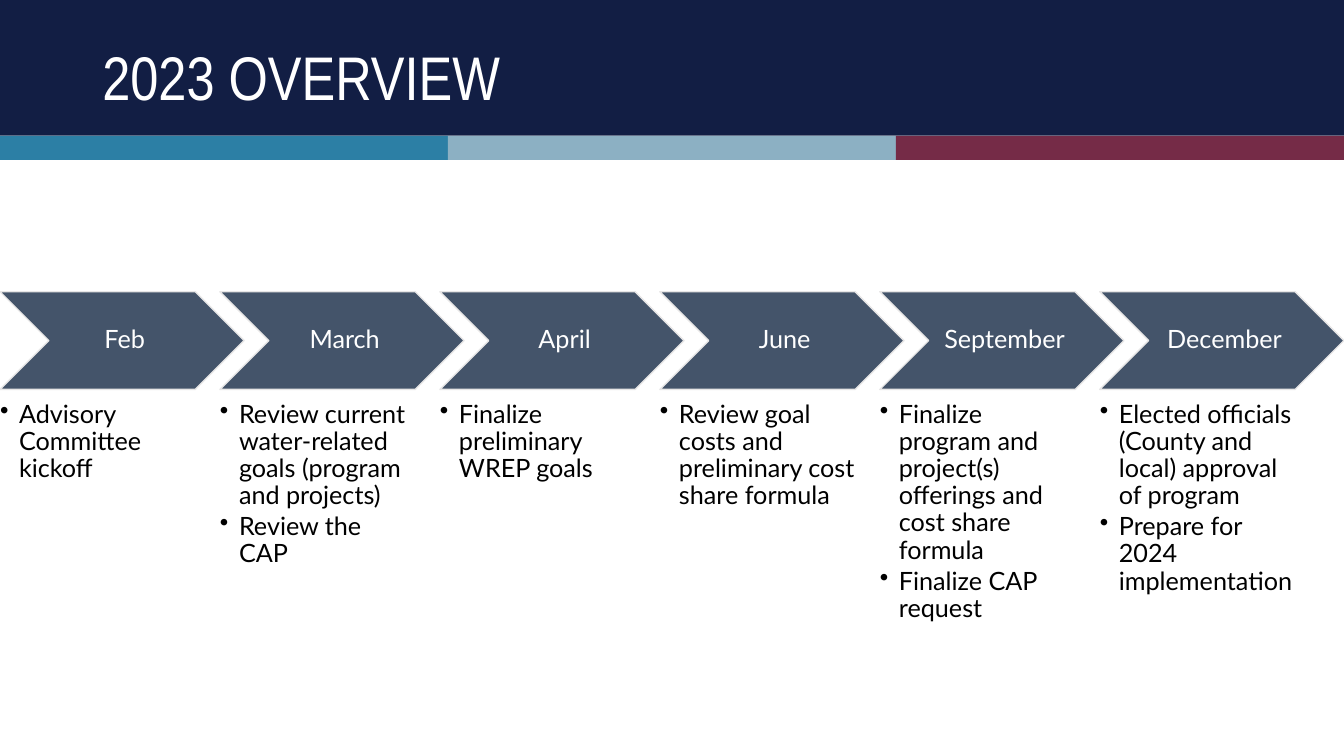
import pptx
import pptx.dml.color
import pptx.enum.shapes
import pptx.enum.text
import pptx.oxml.ns
import pptx.util
from lxml import etree

Pt = pptx.util.Pt
RGBColor = pptx.dml.color.RGBColor
MSO_SHAPE = pptx.enum.shapes.MSO_SHAPE
PP_ALIGN = pptx.enum.text.PP_ALIGN
MSO_ANCHOR = pptx.enum.text.MSO_ANCHOR

NAVY = RGBColor(0x12, 0x1E, 0x44)
TEAL = RGBColor(0x2C, 0x7F, 0xA5)
PALE_BLUE = RGBColor(0x8C, 0xB0, 0xC3)
MAROON = RGBColor(0x75, 0x2B, 0x47)
SLATE = RGBColor(0x44, 0x54, 0x6A)
LIGHT_GREY = RGBColor(0xE7, 0xE6, 0xE6)
WHITE = RGBColor(0xFF, 0xFF, 0xFF)
BLACK = RGBColor(0, 0, 0)

SLIDE_W, SLIDE_H = 960, 540
HEADER_H, STRIPE_H = 97, 17.2
CHEVRON_W, CHEVRON_H, CHEVRON_TOP = 174.4, 69.8, 208.4
TASKS_W, TASKS_H, TASKS_TOP = 139.5, 155.5, 286.6

MILESTONES = [
    ("Feb", ["Advisory Committee kickoff"]),
    ("March", ["Review current water-related goals (program and projects)",
               "Review the CAP"]),
    ("April", ["Finalize preliminary WREP goals"]),
    ("June", ["Review goal costs and preliminary cost share formula"]),
    ("September", ["Finalize program and project(s) offerings and cost share formula",
                   "Finalize CAP request"]),
    ("December", ["Elected officials (County and local) approval of program",
                  "Prepare for 2024 implementation"]),
]


class SlideBuilder:
    title_font, body_font = "Arial Narrow", "Lato"
    title_size, body_size = 44, 18
    line_spacing = 0.9
    bullet_indent = 13.6

    def __init__(self, slide):
        self.slide = slide

    def shape(self, kind, x, y, w, h, fill, line=None):
        sp = self.slide.shapes.add_shape(kind, Pt(x), Pt(y), Pt(w), Pt(h))
        sp.shadow.inherit = False
        sp.fill.solid()
        sp.fill.fore_color.rgb = fill
        if line is None:
            sp.line.fill.background()
        else:
            sp.line.color.rgb = line
            sp.line.width = Pt(1)
        return sp

    def frame(self, sp, insets, anchor):
        """Set wrapping, insets (left, top, right, bottom) and anchor."""
        tf = sp.text_frame
        tf.word_wrap = True
        tf.margin_left, tf.margin_top, tf.margin_right, tf.margin_bottom = map(Pt, insets)
        tf.vertical_anchor = anchor
        return tf

    def textbox(self, x, y, w, h, insets, anchor):
        sp = self.slide.shapes.add_textbox(Pt(x), Pt(y), Pt(w), Pt(h))
        return self.frame(sp, insets, anchor)

    def paragraph(self, p, text, font, size, color, align=PP_ALIGN.LEFT):
        p.text = text
        p.alignment = align
        p.line_spacing = self.line_spacing
        for r in p.runs:
            r.font.name = font
            r.font.size = Pt(size)
            r.font.color.rgb = color

    def title(self, text, x, y, w, h):
        tf = self.textbox(x, y, w, h, (7.2, 3.6, 7.2, 3.6), MSO_ANCHOR.MIDDLE)
        self.paragraph(tf.paragraphs[0], text, self.title_font, self.title_size, WHITE)

    def chevron(self, month, x):
        sp = self.shape(MSO_SHAPE.CHEVRON, x, CHEVRON_TOP, CHEVRON_W, CHEVRON_H,
                        SLATE, LIGHT_GREY)
        tf = self.frame(sp, (5.8, 2, 2, 2), MSO_ANCHOR.MIDDLE)
        self.paragraph(tf.paragraphs[0], month, self.body_font, self.body_size,
                       WHITE, PP_ALIGN.CENTER)

    def bullets(self, items, x):
        tf = self.textbox(x, TASKS_TOP, TASKS_W, TASKS_H, (0, 0, 0, 0), MSO_ANCHOR.TOP)
        for i, item in enumerate(items):
            p = tf.paragraphs[0] if i == 0 else tf.add_paragraph()
            pPr = p._p.get_or_add_pPr()
            pPr.set("marL", str(Pt(self.bullet_indent)))
            pPr.set("indent", str(-Pt(self.bullet_indent)))
            etree.SubElement(pPr, pptx.oxml.ns.qn("a:buChar")).set("char", "•")
            self.paragraph(p, item, self.body_font, self.body_size, BLACK)
            p.space_after = Pt(2.7)


def main():
    prs = pptx.Presentation()
    prs.slide_width, prs.slide_height = Pt(SLIDE_W), Pt(SLIDE_H)
    s = SlideBuilder(prs.slides.add_slide(prs.slide_layouts[6]))

    s.shape(MSO_SHAPE.RECTANGLE, 0, 0, SLIDE_W, HEADER_H, NAVY)
    stripes = [TEAL, PALE_BLUE, MAROON]
    stripe_w = SLIDE_W / len(stripes)
    for i, color in enumerate(stripes):
        s.shape(MSO_SHAPE.RECTANGLE, i * stripe_w, HEADER_H, stripe_w, STRIPE_H, color)

    pitch = (SLIDE_W - CHEVRON_W) / (len(MILESTONES) - 1)
    for i, (month, tasks) in enumerate(MILESTONES):
        s.chevron(month, i * pitch)
        s.bullets(tasks, i * pitch)

    s.title("2023 OVERVIEW", 66, 18, 857.5, 78.5)
    prs.save("out.pptx")


if __name__ == "__main__":
    main()
